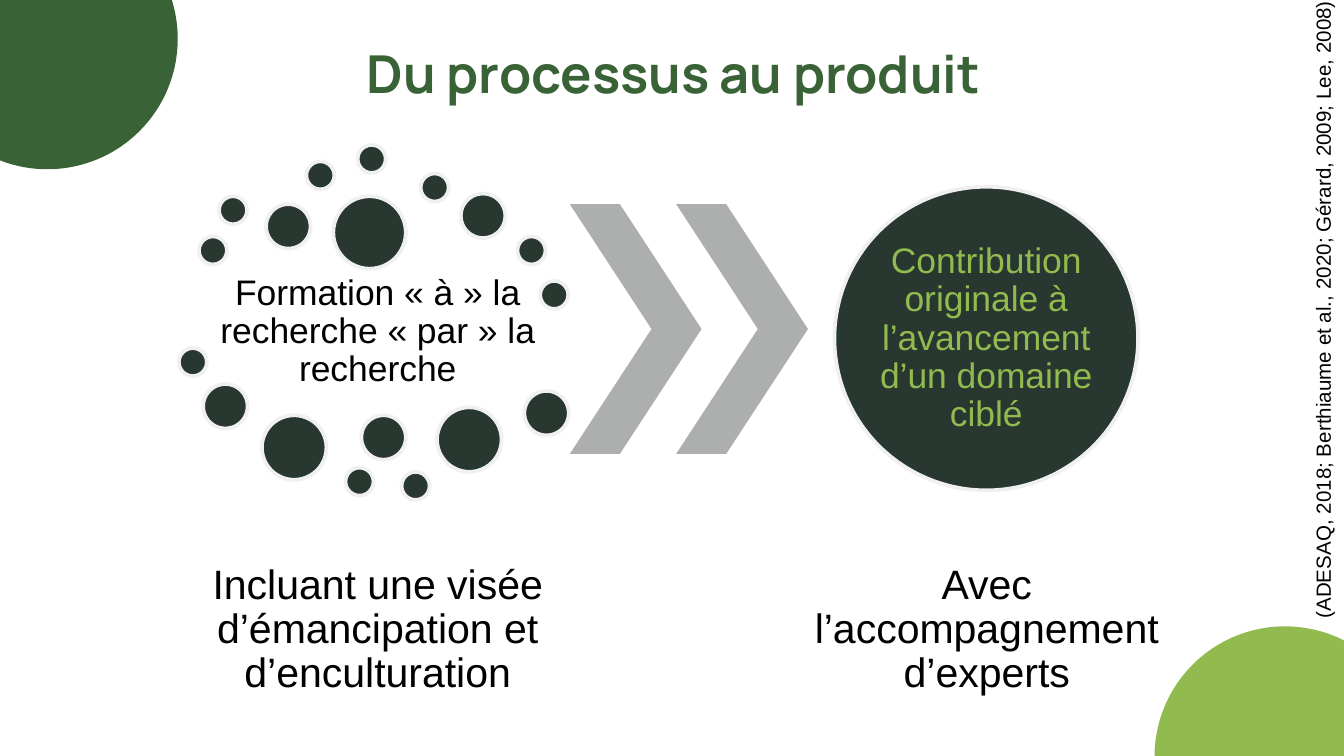
from pptx import Presentation
from pptx.dml.color import RGBColor
from pptx.enum.shapes import MSO_SHAPE as Preset
from pptx.enum.text import MSO_ANCHOR as Anchor, PP_ALIGN as Align
from pptx.util import Cm, Pt

FOREST, LEAF, NIGHT = "396336", "91BA4F", "283730"
GREY, PALE, BLACK = "ADAEAE", "F0F0F0", "000000"


def color(value):
    return RGBColor.from_string(value)


class ProcessSlide:
    font = "Arial"
    outline_width = 2

    def __init__(self, presentation):
        layout = presentation.slide_layouts.get_by_name("Title Only")
        self.slide = presentation.slides.add_slide(layout)

    def add_text(self, frame, text, size, fill, align=Align.CENTER,
                 font=None, bold=False, spacing=None):
        paragraph = frame.paragraphs[0]
        paragraph.alignment = align
        paragraph.line_spacing = spacing
        run = paragraph.add_run()
        run.text = text
        run.font.name = font or self.font
        run.font.size = Pt(size)
        run.font.bold = bold
        run.font.color.rgb = color(fill)

    def inset(self, frame, margin):
        frame.margin_left = frame.margin_right = Cm(margin)
        frame.margin_top = frame.margin_bottom = Cm(margin)

    def title(self, text, left, top, width, height):
        shape = self.slide.shapes.title
        shape.left, shape.top = Cm(left), Cm(top)
        shape.width, shape.height = Cm(width), Cm(height)
        frame = shape.text_frame
        frame.vertical_anchor = Anchor.TOP
        self.inset(frame, 0.25)
        self.add_text(frame, text, 28, FOREST, font="Manrope", bold=True)

    def shape(self, preset, left, top, width, height, fill, outline=None):
        shape = self.slide.shapes.add_shape(
            preset, Cm(left), Cm(top), Cm(width), Cm(height))
        shape.shadow.inherit = False
        shape.fill.solid()
        shape.fill.fore_color.rgb = color(fill)
        if outline:
            shape.line.color.rgb = color(outline)
            shape.line.width = Pt(self.outline_width)
        else:
            shape.line.fill.background()
        return shape

    def circle(self, left, top, diameter, fill, outline=None):
        return self.shape(Preset.OVAL, left, top, diameter, diameter, fill, outline)

    def chevron(self, left, top, width, height):
        shape = self.shape(Preset.CHEVRON, left, top, width, height, GREY)
        shape.adjustments[0] = 0.62

    def text_box(self, left, top, width, height):
        box = self.slide.shapes.add_textbox(Cm(left), Cm(top), Cm(width), Cm(height))
        box.text_frame.word_wrap = True
        return box

    def label(self, text, left, top, width, height, size, fill=BLACK, margin=0.08):
        frame = self.text_box(left, top, width, height).text_frame
        frame.vertical_anchor = Anchor.MIDDLE
        self.inset(frame, margin)
        self.add_text(frame, text, size, fill, spacing=0.9)

    def side_note(self, text, left, top, width, height):
        box = self.text_box(left, top, width, height)
        box.rotation = 270
        self.add_text(box.text_frame, text, 11, BLACK, align=Align.LEFT)


# Dots around the process, by diameter: (left, top) in cm
DOTS = {
    0.53: [(3.76, 4.47), (4.14, 3.71), (5.79, 3.05), (6.76, 2.74), (7.95, 3.28),
           (9.78, 4.47), (10.21, 5.31), (3.38, 6.58), (6.53, 8.84), (7.59, 8.92)],
    0.84: [(5.03, 3.86), (8.71, 3.66), (3.84, 7.26), (6.83, 7.85), (9.91, 7.39)],
    1.22: [(4.95, 7.85), (8.26, 7.7)],
    1.37: [(6.3, 3.71)],
}


def main():
    presentation = Presentation()
    presentation.slide_width, presentation.slide_height = Cm(25.4), Cm(14.29)
    page = ProcessSlide(presentation)

    # Corner circles and title
    page.circle(21.82, 11.84, 4.93, LEAF)
    page.circle(-1.57, -1.73, 4.93, FOREST)
    page.title("Du processus au produit", 0.89, 0.53, 23.67, 1.6)

    # Process
    page.label("Formation « à » la recherche « par » la recherche",
               3.76, 5.16, 6.76, 2.24, 19)
    for diameter, places in DOTS.items():
        for left, top in places:
            page.circle(left, top, diameter, NIGHT, PALE)

    # Chevrons from process to product
    for left in (10.77, 12.78):
        page.chevron(left, 3.86, 2.49, 4.72)

    # Product
    page.circle(15.77, 3.53, 5.74, NIGHT, PALE)
    page.label("Contribution originale à l’avancement d’un domaine ciblé",
               16.61, 4.37, 4.06, 4.06, 19, LEAF, margin=0)

    # Captions under both parts
    for left, caption in (
        (3.76, "Incluant une visée d’émancipation et d’enculturation"),
        (15.27, "Avec l’accompagnement d’experts"),
    ):
        page.label(caption, left, 9.83, 6.76, 4.17, 22)

    # References along the right edge
    page.side_note("(ADESAQ, 2018; Berthiaume et al., 2020; Gérard, 2009; Lee, 2008)",
                   17.81, 4.37, 14.4, 0.74)

    presentation.save("out.pptx")


if __name__ == "__main__":
    main()
